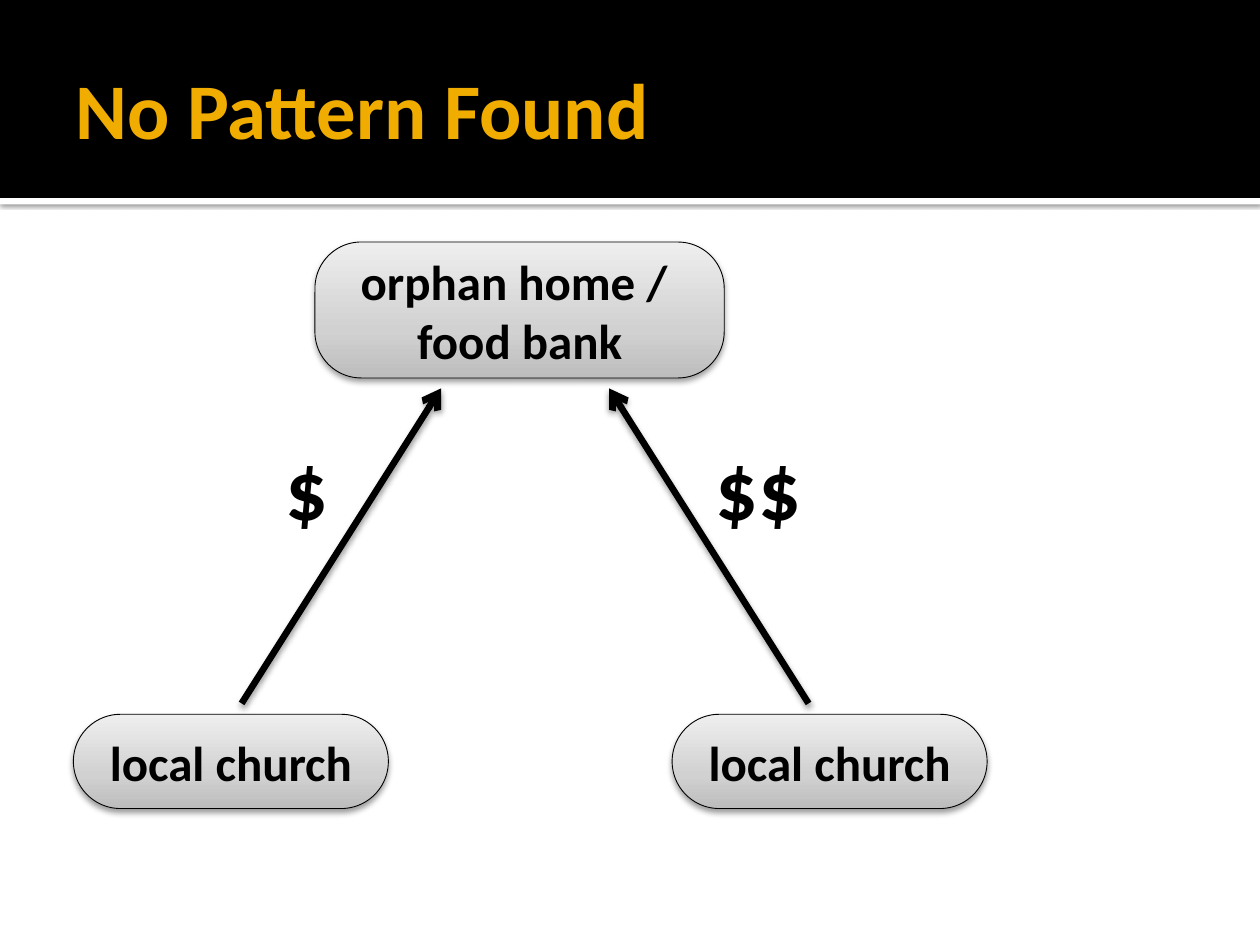
from lxml import etree
from pptx import Presentation
from pptx.dml.color import RGBColor
from pptx.enum.shapes import MSO_CONNECTOR as Link, MSO_SHAPE as Kind
from pptx.enum.text import MSO_ANCHOR as Anchor, PP_ALIGN as Align
from pptx.oxml.ns import qn
from pptx.util import Cm, Pt

BLACK, WHITE, GOLD = "000000", "FFFFFF", "F0AD00"
STOPS = [(0, "BDBDBD"), (35, "D1D1D1"), (100, "EEEEEE")]


def color(code):
    return RGBColor.from_string(code)


def add_stop(parent, pos, code):
    stop = etree.SubElement(parent, qn("a:gs"), pos=str(pos * 1000))
    etree.SubElement(stop, qn("a:srgbClr"), val=code)


def shade(shape, alpha=38, blur=3.5, dist=2):
    """Cast a soft black shadow straight down; call after the line is set."""
    props = shape._element.spPr
    effects = etree.SubElement(props, qn("a:effectLst"))
    outer = etree.SubElement(
        effects, qn("a:outerShdw"), blurRad=str(Pt(blur)), dist=str(Pt(dist)),
        dir="5400000", algn="ctr", rotWithShape="0")
    tint = etree.SubElement(outer, qn("a:srgbClr"), val=BLACK)
    etree.SubElement(tint, qn("a:alpha"), val=str(alpha * 1000))


def write(shape, text, size=28, ink=BLACK, align=Align.LEFT,
          anchor=Anchor.TOP, wrap=True, right=0.25):
    frame = shape.text_frame
    frame.word_wrap = wrap
    frame.vertical_anchor = anchor
    frame.margin_right = Cm(right)
    frame.text = text
    for para in frame.paragraphs:
        para.alignment = align
        for run in para.runs:
            font = run.font
            font.name, font.size, font.bold = "Calibri", Pt(size), True
            font.color.rgb = color(ink)


def add_band(slide, top, height, code):
    band = slide.shapes.add_shape(
        Kind.RECTANGLE, 0, Cm(top), Cm(25.4), Cm(height))
    band.shadow.inherit = False
    band.fill.solid()
    band.fill.fore_color.rgb = color(code)
    band.line.fill.background()
    return band


def add_label(slide, text, left, top, width, height, **style):
    box = slide.shapes.add_textbox(Cm(left), Cm(top), Cm(width), Cm(height))
    write(box, text, **style)


def add_node(slide, text, left, top, width, height, bend):
    node = slide.shapes.add_shape(
        Kind.ROUNDED_RECTANGLE, Cm(left), Cm(top), Cm(width), Cm(height))
    node.adjustments[0] = bend
    node.fill.gradient()
    node.fill.gradient_angle = 90
    ramp = node._element.spPr.find(".//" + qn("a:gsLst"))
    for old in list(ramp):
        ramp.remove(old)
    for pos, code in STOPS:
        add_stop(ramp, pos, code)
    node.line.color.rgb = color(BLACK)
    node.line.width = Pt(0.5)
    shade(node)
    write(node, text, align=Align.CENTER, anchor=Anchor.MIDDLE)


def add_arrow(slide, start, end):
    arrow = slide.shapes.add_connector(
        Link.STRAIGHT, *(Cm(n) for n in (*start, *end)))
    arrow.line.color.rgb = color(BLACK)
    arrow.line.width = Pt(3.78)
    etree.SubElement(arrow.line._get_or_add_ln(), qn("a:tailEnd"),
                     type="arrow")
    shade(arrow)


def main():
    deck = Presentation()
    deck.slide_width, deck.slide_height = Cm(25.4), Cm(19.05)
    slide = deck.slides.add_slide(deck.slide_layouts[6])

    # Header
    strip = add_band(slide, 3.99, 0.13, WHITE)
    strip._element.spPr.remove(strip._element.spPr.find(qn("a:effectLst")))
    shade(strip, alpha=60, blur=2.5, dist=0.8)
    add_band(slide, 0, 3.99, BLACK)
    add_label(slide, "No Pattern Found", 1.27, 0.43, 22.86, 3.48, size=45,
              ink=GOLD, anchor=Anchor.MIDDLE, right=0.13)

    # Receiver and givers
    add_node(slide, "orphan home / \nfood bank", 6.35, 4.88, 8.25, 2.74, 0.34)
    for left in (1.48, 13.55):
        add_node(slide, "local church", left, 14.4, 6.35, 1.9, 0.5)

    # Money flows
    for foot, tip in ((4.87, 8.89), (16.3, 12.28)):
        add_arrow(slide, (foot, 14.18), (tip, 7.83))
    for text, left, width in (("$", 5.5, 1.42), ("$$", 14.18, 2.31)):
        add_label(slide, text, left, 8.68, width, 2.31, size=48, wrap=False)

    deck.save("out.pptx")


if __name__ == "__main__":
    main()
